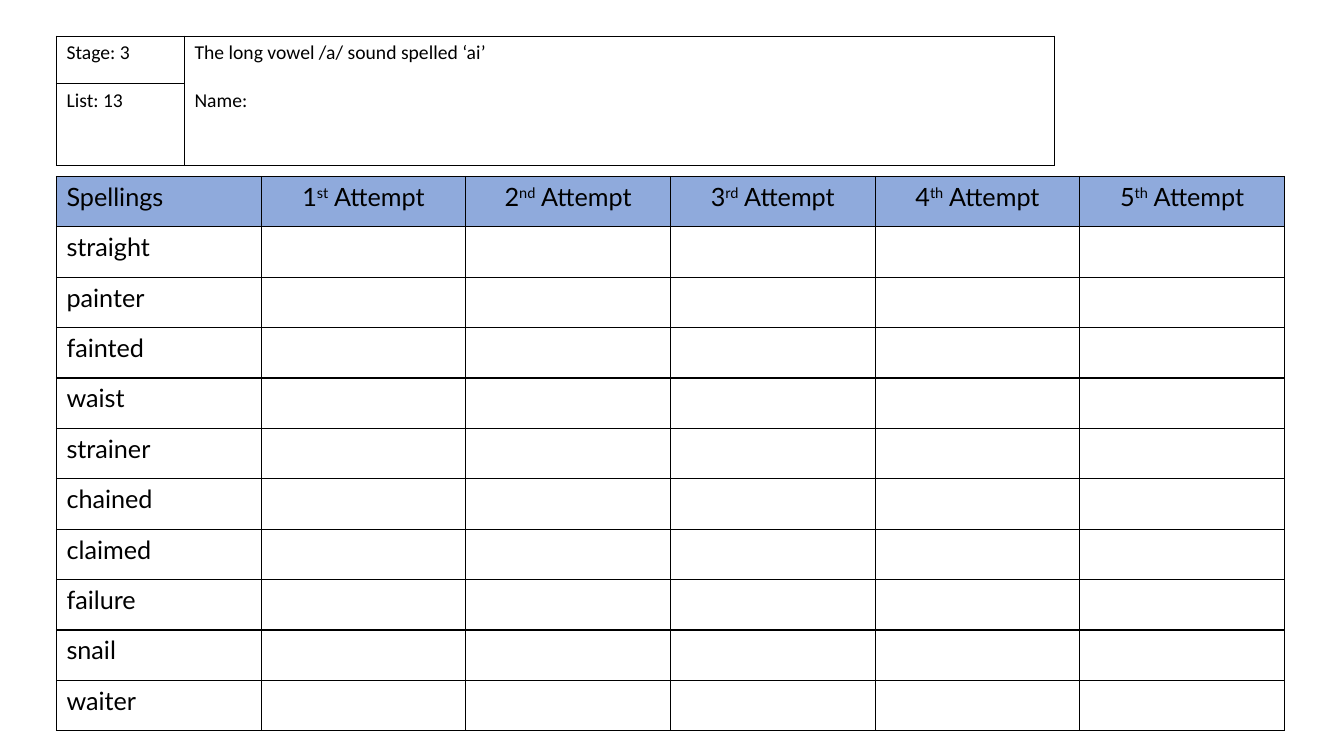
import pptx
import pptx.util
import pptx.dml.color
import pptx.enum.text
from lxml import etree
from pptx.oxml.ns import qn
from pptx.util import Inches

STAGE, LIST_NUMBER = "Stage: 3", "List: 13"
TOPIC, NAME_LABEL = "The long vowel /a/ sound spelled ‘ai’", "Name:"
ORDINALS = [("1", "st"), ("2", "nd"), ("3", "rd"), ("4", "th"), ("5", "th")]
WORDS = ["straight", "painter", "fainted", "waist", "strainer",
         "chained", "claimed", "failure", "snail", "waiter"]

BLACK = pptx.dml.color.RGBColor(0x00, 0x00, 0x00)
HEADER_BLUE = pptx.dml.color.RGBColor(0x8F, 0xAA, 0xDC)
CENTER = pptx.enum.text.PP_ALIGN.CENTER
LEFT = 0.56


def add_text(paragraph, text, font="Lato", size=18, align=None, raised=False):
    """Append a run to the paragraph; raised makes it superscript."""
    if align is not None:
        paragraph.alignment = align
    run = paragraph.add_run()
    run.text = text
    run.font.name = font
    run.font.size = pptx.util.Pt(size)
    run.font.color.rgb = BLACK
    if raised:
        run.font._element.set("baseline", "30000")


def add_borders(cell):
    properties = cell._tc.get_or_add_tcPr()
    for position, side in enumerate(("lnL", "lnR", "lnT", "lnB")):
        line = etree.Element(qn("a:" + side), w=str(pptx.util.Pt(1)))
        fill = etree.SubElement(line, qn("a:solidFill"))
        etree.SubElement(fill, qn("a:srgbClr"), val=str(BLACK))
        properties.insert(position, line)


def add_grid(slide, top, column_widths, row_heights):
    """Add a plain table with black borders and no fill."""
    frame = slide.shapes.add_table(
        len(row_heights), len(column_widths), Inches(LEFT), Inches(top),
        Inches(sum(column_widths)), Inches(sum(row_heights)))
    table = frame.table
    table.first_row = table.horz_banding = False
    for column, width in zip(table.columns, column_widths):
        column.width = Inches(width)
    for row, height in zip(table.rows, row_heights):
        row.height = Inches(height)
    for cell in table.iter_cells():
        cell.fill.background()
        add_borders(cell)
    return table


def add_spelling_table(slide):
    table = add_grid(slide, 1.75, [2.03] * (len(ORDINALS) + 1),
                     [0.5] * (len(WORDS) + 1))
    for cell in table.rows[0].cells:
        cell.fill.solid()
        cell.fill.fore_color.rgb = HEADER_BLUE
    for row, word in enumerate(["Spellings"] + WORDS):
        add_text(table.cell(row, 0).text_frame.paragraphs[0], word)
    for column, (number, suffix) in enumerate(ORDINALS, start=1):
        paragraph = table.cell(0, column).text_frame.paragraphs[0]
        add_text(paragraph, number, align=CENTER)
        add_text(paragraph, suffix, raised=True)
        add_text(paragraph, " Attempt")


def add_details_table(slide):
    table = add_grid(slide, 0.36, [1.27, 8.63], [0.47, 0.47])
    table.cell(0, 1).merge(table.cell(1, 1))
    details = table.cell(0, 1).text_frame
    name_paragraph = details.add_paragraph()
    name_paragraph.space_before = pptx.util.Pt(17)
    for paragraph, text in [
        (table.cell(0, 0).text_frame.paragraphs[0], STAGE),
        (table.cell(1, 0).text_frame.paragraphs[0], LIST_NUMBER),
        (details.paragraphs[0], TOPIC),
        (name_paragraph, NAME_LABEL),
    ]:
        add_text(paragraph, text, font="Calibri", size=14)


def main():
    presentation = pptx.Presentation()
    presentation.slide_width = Inches(13.33)
    presentation.slide_height = Inches(7.5)
    slide = presentation.slides.add_slide(presentation.slide_layouts[6])
    add_spelling_table(slide)
    add_details_table(slide)
    presentation.save("out.pptx")


if __name__ == "__main__":
    main()
